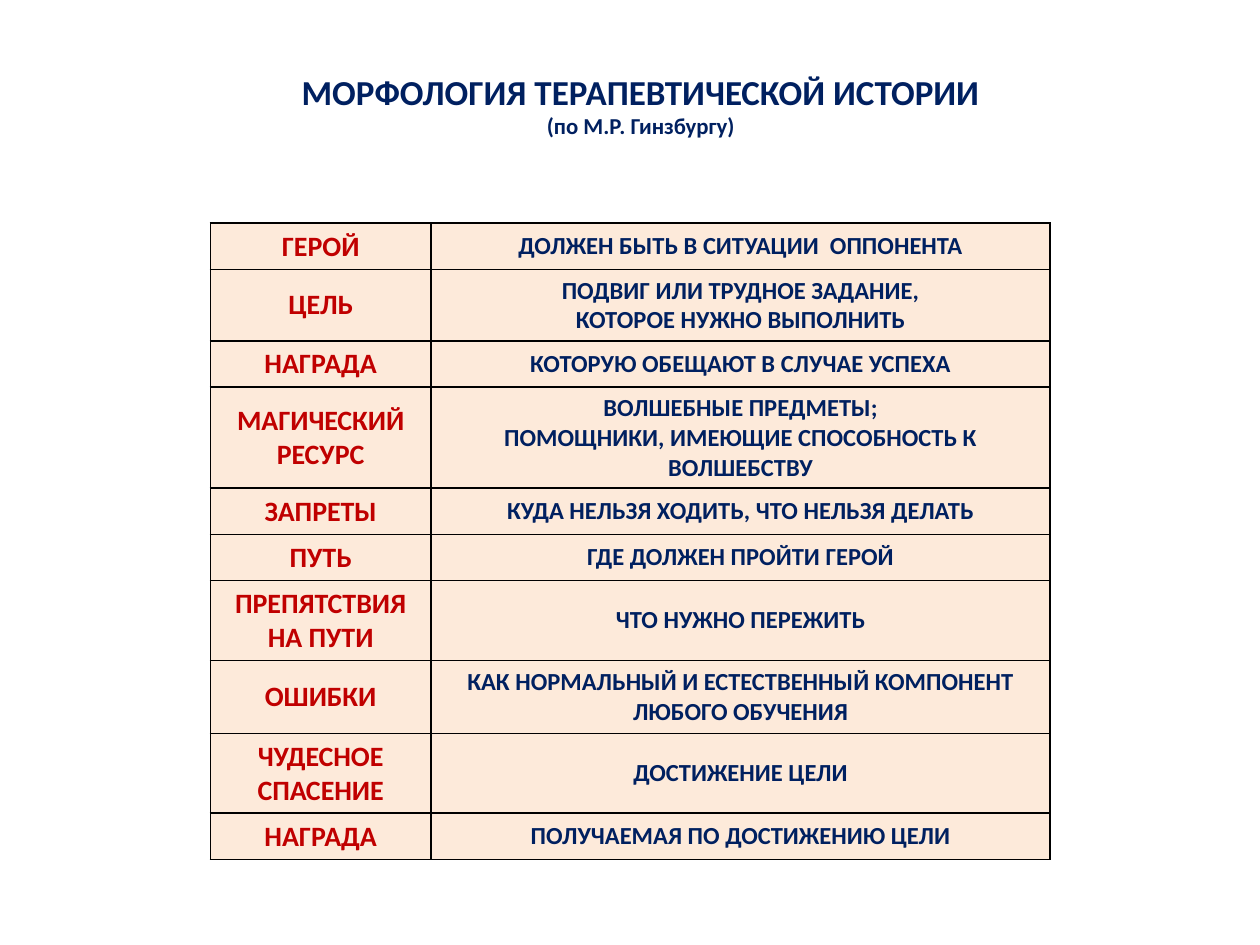
from pptx import Presentation
from pptx.dml.color import RGBColor
from pptx.enum.text import MSO_ANCHOR, PP_ALIGN
from pptx.oxml import parse_xml
from pptx.oxml.ns import nsdecls
from pptx.util import Cm, Pt

NAVY = RGBColor(0x00, 0x20, 0x60)
RED = RGBColor(0xC0, 0x00, 0x00)
PEACH = RGBColor(0xFD, 0xEA, 0xDA)
BLACK = RGBColor(0x00, 0x00, 0x00)

# Story element, its meaning, smallest row height in cm
STORY_PARTS = [
    ("ГЕРОЙ", "ДОЛЖЕН БЫТЬ В СИТУАЦИИ  ОППОНЕНТА", 0.89),
    ("ЦЕЛЬ", "ПОДВИГ ИЛИ ТРУДНОЕ ЗАДАНИЕ,\nКОТОРОЕ НУЖНО ВЫПОЛНИТЬ", 1.22),
    ("НАГРАДА", "КОТОРУЮ ОБЕЩАЮТ В СЛУЧАЕ УСПЕХА", 0.89),
    ("МАГИЧЕСКИЙ РЕСУРС",
     "ВОЛШЕБНЫЕ ПРЕДМЕТЫ;\nПОМОЩНИКИ, ИМЕЮЩИЕ СПОСОБНОСТЬ К ВОЛШЕБСТВУ", 1.47),
    ("ЗАПРЕТЫ", "КУДА НЕЛЬЗЯ ХОДИТЬ, ЧТО НЕЛЬЗЯ ДЕЛАТЬ", 0.89),
    ("ПУТЬ", "ГДЕ ДОЛЖЕН ПРОЙТИ ГЕРОЙ", 0.89),
    ("ПРЕПЯТСТВИЯ НА ПУТИ", "ЧТО НУЖНО ПЕРЕЖИТЬ", 1.37),
    ("ОШИБКИ", "КАК НОРМАЛЬНЫЙ И ЕСТЕСТВЕННЫЙ КОМПОНЕНТ\nЛЮБОГО ОБУЧЕНИЯ", 1.47),
    ("ЧУДЕСНОЕ СПАСЕНИЕ", "ДОСТИЖЕНИЕ ЦЕЛИ", 1.37),
    ("НАГРАДА", "ПОЛУЧАЕМАЯ ПО ДОСТИЖЕНИЮ ЦЕЛИ", 0.89),
]


class SlideBuilder:
    """Holds the text style and the slide being built."""

    font_name = "Calibri"
    border_width = Pt(1)

    def __init__(self, page):
        self.page = page

    def format_para(self, para, sizes, color):
        """Centre a paragraph and style its runs, one size per run."""
        para.alignment = PP_ALIGN.CENTER
        for span, size in zip(para.runs, sizes):
            span.font.name = self.font_name
            span.font.size = Pt(size)
            span.font.bold = True
            span.font.color.rgb = color

    def title(self, text, left, top, width, height, sizes):
        box = self.page.shapes.add_textbox(Cm(left), Cm(top), Cm(width), Cm(height))
        frame = box.text_frame
        frame.word_wrap = True
        frame.vertical_anchor = MSO_ANCHOR.MIDDLE
        para = frame.paragraphs[0]
        para.text = text
        self.format_para(para, sizes, NAVY)

    def border(self, cell):
        properties = cell._tc.get_or_add_tcPr()
        for side in ("lnL", "lnR", "lnT", "lnB"):
            properties.append(parse_xml(
                f'<a:{side} {nsdecls("a")} w="{self.border_width}"><a:solidFill>'
                f'<a:srgbClr val="{BLACK}"/></a:solidFill></a:{side}>'))

    def cell(self, cell, text, size, color):
        self.border(cell)
        cell.fill.solid()
        cell.fill.fore_color.rgb = PEACH
        cell.vertical_anchor = MSO_ANCHOR.MIDDLE
        cell.text_frame.text = text
        for para in cell.text_frame.paragraphs:
            self.format_para(para, [size], color)

    def table(self, parts, left, top, height, column_widths):
        frame = self.page.shapes.add_table(
            len(parts), len(column_widths), Cm(left), Cm(top),
            Cm(sum(column_widths)), Cm(height))
        table = frame.table
        table.first_row = table.horz_banding = False
        for column, width in zip(table.columns, column_widths):
            column.width = Cm(width)
        for row, (name, meaning, row_height) in zip(table.rows, parts):
            row.height = Cm(row_height)
            self.cell(row.cells[0], name, 16, RED)
            self.cell(row.cells[1], meaning, 14, NAVY)
        frame.height = Cm(height)


def main():
    deck = Presentation()
    deck.slide_width, deck.slide_height = Cm(25.4), Cm(19.05)
    builder = SlideBuilder(deck.slides.add_slide(deck.slide_layouts[6]))

    # Heading with the author's line below it
    builder.title("МОРФОЛОГИЯ ТЕРАПЕВТИЧЕСКОЙ ИСТОРИИ\v(по М.Р. Гинзбургу)",
                  1.09, 0.91, 23.65, 2.41, sizes=(20, 13))

    # Elements of the story
    builder.table(STORY_PARTS, 4.24, 4.5, 12.83, column_widths=(4.45, 12.48))

    deck.save("out.pptx")


if __name__ == "__main__":
    main()
